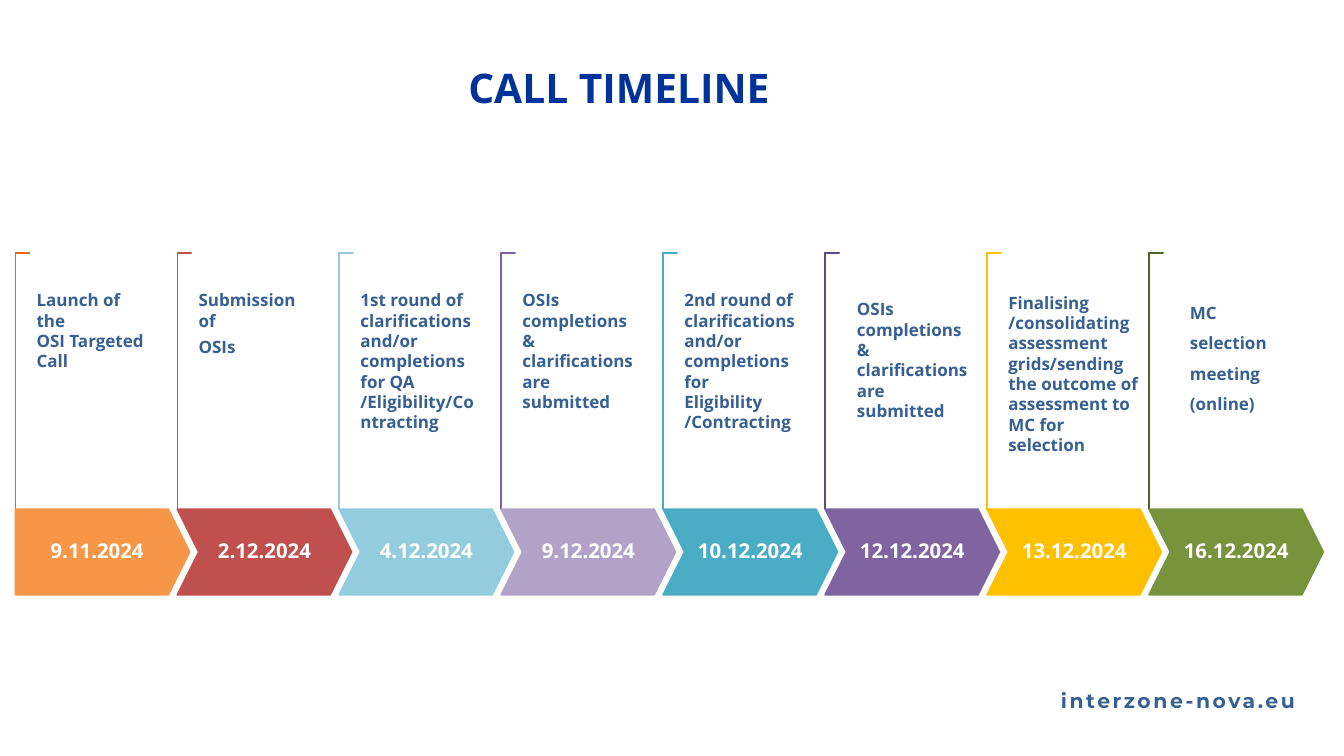
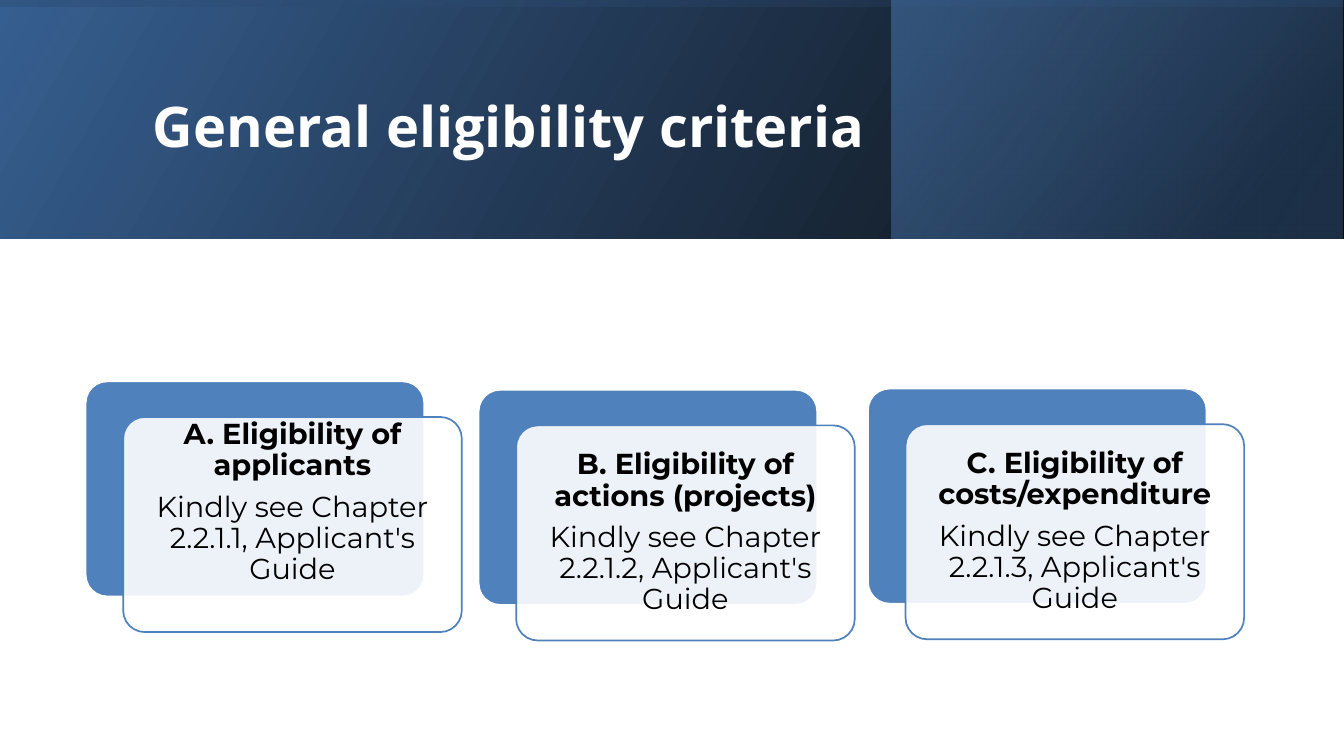
"""Build the call timeline slide and the eligibility criteria slide."""
import dataclasses

import lxml.etree
import pptx
import pptx.dml.color
import pptx.enum.shapes
import pptx.enum.text
import pptx.oxml.ns
import pptx.util

Cm = pptx.util.Cm
Pt = pptx.util.Pt
SHAPE = pptx.enum.shapes.MSO_SHAPE
ALIGN = pptx.enum.text.PP_ALIGN
ANCHOR = pptx.enum.text.MSO_ANCHOR
qn = pptx.oxml.ns.qn


@dataclasses.dataclass(frozen=True)
class Theme:
    head: str = "Open Sans"
    body: str = "Montserrat"
    title: str = "003399"
    text: str = "376092"
    card: str = "4F81BD"
    white: str = "FFFFFF"
    black: str = "000000"
    timeline_size: int = 48
    banner_size: int = 66
    card_size: int = 34
    date_size: int = 24
    label_size: int = 20
    line: int = 2


THEME = Theme()
WIDTH, HEIGHT = 55.85, 31.42
FOOTER = "interzone-nova.eu"

MILESTONES = [
    ("9.11.2024", "F79646", "E46C0A", ["Launch of the", "OSI Targeted Call"]),
    ("2.12.2024", "C0504D", "C0504D", ["Submission of", "OSIs"]),
    ("4.12.2024", "93CDDD", "93CDDD",
     ["1st round of clarifications and/or completions for QA /Eligibility/Contracting"]),
    ("9.12.2024", "B3A2C7", "8064A2",
     ["OSIs completions & clarifications are submitted"]),
    ("10.12.2024", "4BACC6", "4BACC6",
     ["2nd round of clarifications and/or completions for Eligibility /Contracting"]),
    ("12.12.2024", "8064A2", "604A7B",
     ["OSIs completions & clarifications are submitted"]),
    ("13.12.2024", "FFC000", "FFC000",
     ["Finalising /consolidating assessment grids/sending the outcome of "
      "assessment to MC for selection"]),
    ("16.12.2024", "77933C", "4F6228", ["MC selection meeting (online)"]),
]
LABEL_BOX = (0.58, 10.85, 5.87, 7.72)
LABEL_BOXES = {5: (1.02, 11.23, 5.92, 6.65), 6: (0.58, 10.95, 6.53, 6.65),
               7: (1.4, 10.95, 5.31, 6.65)}
LABEL_FORMATS = {1: {"after": 7}, 7: {"spacing": 1.5}}

BAND_HEIGHT = 9.93
BANDS = [
    ((0, 0, WIDTH, BAND_HEIGHT), 0, 330, [(0, "000000", 96), (100, "376092", 100)]),
    ((37.03, 0, 18.77, BAND_HEIGHT), 0, 320, [(19, "254061", 68), (100, "4F81BD", 48)]),
    (((WIDTH - BAND_HEIGHT) / 2, (BAND_HEIGHT - WIDTH) / 2, BAND_HEIGHT, WIDTH),
     270, 350, [(23, "376092", 16), (99, "000000", 45)]),
]
CARDS = [
    (3.56, 15.85, 1.8, "A. Eligibility of applicants",
     "Kindly see Chapter 2.2.1.1, Applicant's Guide"),
    (19.89, 16.2, 0, "B. Eligibility of actions (projects)",
     "Kindly see Chapter 2.2.1.2, Applicant's Guide"),
    (36.07, 16.15, 0, "C. Eligibility of costs/expenditure",
     "Kindly see Chapter 2.2.1.3, Applicant's Guide"),
]


def rgb(value):
    return pptx.dml.color.RGBColor.from_string(value)


def add_shape(slide, kind, box, fill=None, line=None, adjust=()):
    sp = slide.shapes.add_shape(kind, *map(Cm, box))
    sp.shadow.inherit = False
    for i, value in enumerate(adjust):
        sp.adjustments[i] = value
    if fill:
        sp.fill.solid()
        sp.fill.fore_color.rgb = rgb(fill)
    if line:
        sp.line.color.rgb = rgb(line)
        sp.line.width = Pt(THEME.line)
    else:
        sp.line.fill.background()
    return sp


def write(sp, lines, font, size, color, bold=True, align=ALIGN.LEFT,
          anchor=ANCHOR.TOP, insets=(0, 0, 0, 0), wrap=True, spacing=None, after=0):
    tf = sp.text_frame
    tf.text = "\n".join(lines)
    tf.word_wrap = wrap
    tf.vertical_anchor = anchor
    tf.margin_left, tf.margin_top, tf.margin_right, tf.margin_bottom = map(Cm, insets)
    for p in tf.paragraphs:
        p.alignment = align
        p.line_spacing = spacing
        p.space_after = Pt(after)
        for r in p.runs:
            r.font.name = font
            r.font.size = Pt(size)
            r.font.bold = bold
            r.font.color.rgb = rgb(color)
    return tf


def add_text(slide, box, lines, *args, **formats):
    return write(slide.shapes.add_textbox(*map(Cm, box)), lines, *args, **formats)


def set_alpha(color_element, percent):
    alpha = lxml.etree.SubElement(color_element, qn("a:alpha"))
    alpha.set("val", str(percent * 1000))


def add_band(slide, box, rotation, angle, stops):
    sp = add_shape(slide, SHAPE.RECTANGLE, box)
    sp.rotation = rotation
    sp.element.spPr.find(qn("a:xfrm")).set("flipH", "1")
    sp.fill.gradient()
    grad = sp.element.spPr.find(qn("a:gradFill"))
    grad.set("rotWithShape", "1")
    grad.find(qn("a:lin")).set("ang", str(angle * 60000))
    elements = grad.findall(".//" + qn("a:gs"))
    for stop, gs, (position, color, opacity) in zip(
            sp.fill.gradient_stops, elements, stops):
        stop.position = position / 100
        stop.color.rgb = rgb(color)
        set_alpha(gs[0], opacity)


def add_bracket(slide, x, color):
    y, tick, length = 10.5, 0.58, 10.67
    shift = (length - tick) / 2
    sp = add_shape(slide, SHAPE.CORNER, (x - shift, y + shift, length, tick),
                   THEME.white, color, (0.01, 0.01))
    sp.rotation = 90


def build_timeline(slide):
    left, step, top, width, height = 0.64, 6.73, 21.16, 7.24, 3.56
    add_text(slide, (19.46, 2.59, 13.54, 2.06), ["CALL TIMELINE"],
             THEME.head, THEME.timeline_size, THEME.title, wrap=False)
    for i, (date, fill, accent, label) in enumerate(MILESTONES):
        x = left + i * step
        add_bracket(slide, x, accent)
        arrow = add_shape(slide, SHAPE.CHEVRON if i else SHAPE.PENTAGON,
                          (x, top, width, height), fill, fill, (0.25,))
        write(arrow, [date], THEME.head, THEME.date_size, THEME.white,
              align=ALIGN.CENTER, anchor=ANCHOR.MIDDLE, wrap=False, spacing=0.9)
        dx, *rest = LABEL_BOXES.get(i, LABEL_BOX)
        add_text(slide, (x + dx, *rest), label, THEME.head, THEME.label_size,
                 THEME.text, insets=(0.3, 1.19, 0.79, 0), **LABEL_FORMATS.get(i, {}))
    tf = add_text(slide, (35.94, 28.58, 17.88, 1.57), [FOOTER],
                  THEME.body, THEME.date_size, THEME.text, align=ALIGN.RIGHT)
    tf.paragraphs[0].runs[0].font._element.set("spc", "300")


def build_criteria(slide):
    width, height, dx, dy = 14.07, 8.94, 1.56, 1.48
    for band in BANDS:
        add_band(slide, *band)
    add_text(slide, (6.35, 1.6, 44.5, 7.21), ["General eligibility criteria"],
             THEME.head, THEME.banner_size, THEME.white, anchor=ANCHOR.MIDDLE)
    for x, y, foot, heading, detail in CARDS:
        add_shape(slide, SHAPE.ROUNDED_RECTANGLE, (x, y, width, height),
                  THEME.card, THEME.white, (0.1,))
        front = add_shape(slide, SHAPE.ROUNDED_RECTANGLE, (x + dx, y + dy, width, height),
                          THEME.white, THEME.card, (0.1,))
        set_alpha(front.element.spPr.find(qn("a:solidFill"))[0], 90)
        tf = write(front, [heading, detail], THEME.body, THEME.card_size, THEME.black,
                   align=ALIGN.CENTER, anchor=ANCHOR.MIDDLE,
                   insets=(0.36, 0, 0.36, foot), spacing=0.9, after=12)
        tf.paragraphs[1].runs[0].font.bold = False


def main():
    prs = pptx.Presentation()
    prs.slide_width, prs.slide_height = Cm(WIDTH), Cm(HEIGHT)
    for build in (build_timeline, build_criteria):
        build(prs.slides.add_slide(prs.slide_layouts[6]))
    prs.save("out.pptx")


if __name__ == "__main__":
    main()
